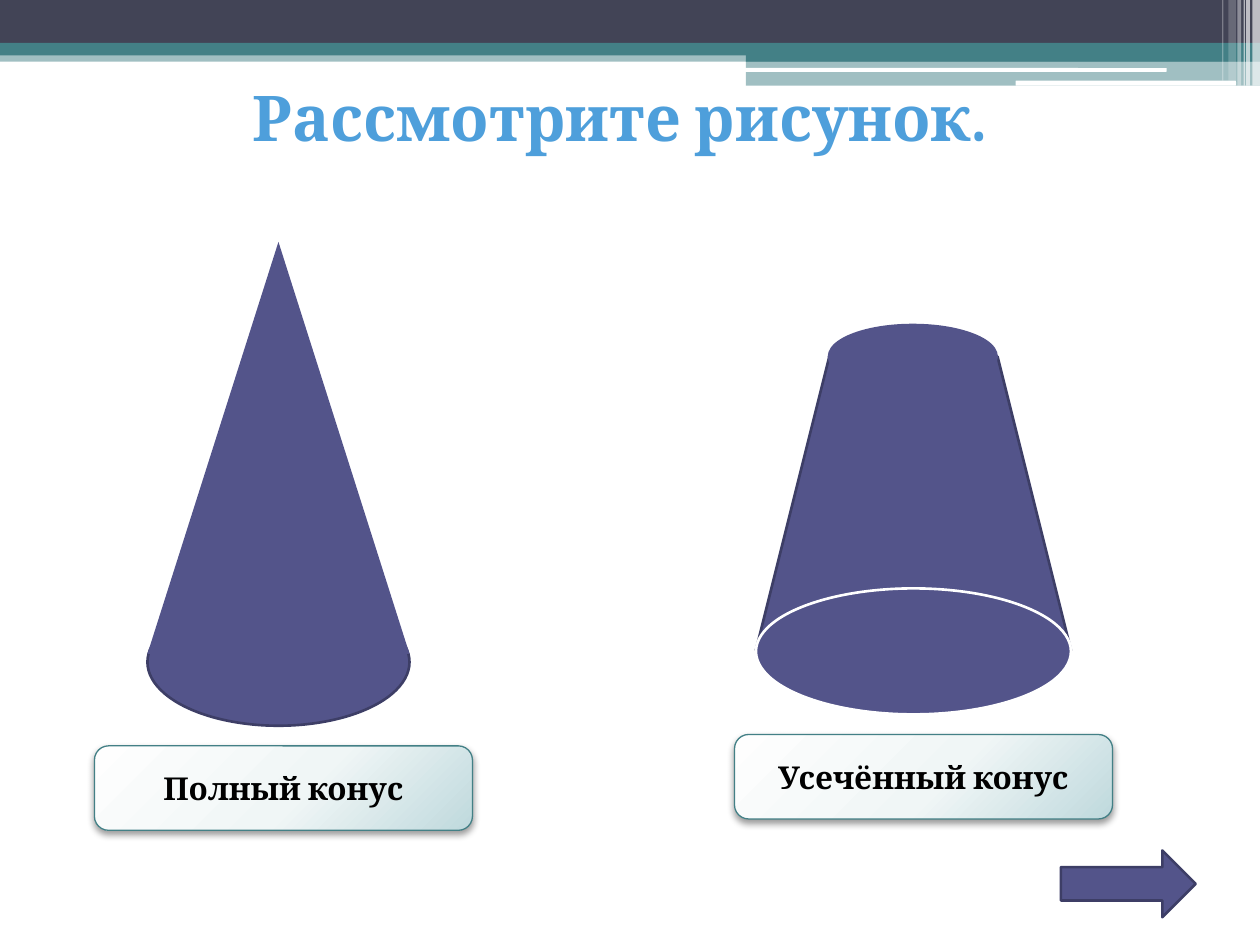
from lxml.etree import SubElement
from pptx import Presentation
from pptx.dml.color import RGBColor
from pptx.enum.shapes import MSO_SHAPE
from pptx.enum.text import MSO_ANCHOR, PP_ALIGN
from pptx.oxml import parse_xml
from pptx.oxml.ns import nsdecls, qn
from pptx.util import Inches, Pt

THEME = {
    "font": "Cambria", "title_size": Pt(36), "label_size": Pt(18),
    "title": "4E9FDB", "text": "000000", "white": "FFFFFF",
    "dark": "424456", "teal": "438086",
    "solid": "53548A", "edge": "3D3E66",
    "gradient": [(0, "FEFEFE"), (55, "F0F6F6"), (100, "BFD9DD")],
    "line": Pt(1.5), "thin_line": Pt(0.75),
}

# Grid of 1000 columns by 750 rows
presentation = Presentation()
presentation.slide_width, presentation.slide_height = Inches(10), Inches(7.5)
CELL = presentation.slide_width // 1000
slide = presentation.slides.add_slide(presentation.slide_layouts[5])


def draw(shapes, kind, box, fill, line=None, opacity=100):
    """Add a preset shape; box is left, top, width, height in grid cells."""
    shape = shapes.add_shape(kind, *(cells * CELL for cells in box))
    shape.shadow.inherit = False
    shape.fill.solid()
    shape.fill.fore_color.rgb = RGBColor.from_string(fill)
    if opacity < 100:
        color = shape.fill._xPr.find(qn("a:solidFill"))[0]
        SubElement(color, qn("a:alpha"), val=str(opacity * 1000))
    if line:
        shape.line.color.rgb = RGBColor.from_string(line)
        shape.line.width = THEME["line"]
    else:
        shape.line.fill.background()
    return shape


def write(shape, text, size, color):
    """Write one centred bold line."""
    frame = shape.text_frame
    frame.text = text
    frame.word_wrap = True
    frame.vertical_anchor = MSO_ANCHOR.MIDDLE
    paragraph = frame.paragraphs[0]
    paragraph.alignment = PP_ALIGN.CENTER
    font = paragraph.runs[0].font
    for name, value in {"name": THEME["font"], "size": size, "bold": True}.items():
        setattr(font, name, value)
    font.color.rgb = RGBColor.from_string(color)


# Header bands
for box, color, opacity in [
    ((0, 40, 1000, 9), "teal", 50),
    ((0, 0, 1000, 34), "dark", 100),
    ((0, 34, 1000, 10), "teal", 100),
    ((592, 39, 408, 10), "teal", 100),
    ((592, 48, 408, 20), "teal", 50),
]:
    draw(slide.shapes, MSO_SHAPE.RECTANGLE, box, THEME[color], opacity=opacity)
for box in [(591, 54, 335, 3), (806, 64, 175, 4)]:
    draw(slide.shapes, MSO_SHAPE.ROUNDED_RECTANGLE, box, THEME["white"])

# Translucent stripes in the corner
for left, width, height, opacity in [
    (994, 6, 68, 65), (989, 3, 68, 65), (987, 1, 68, 60),
    (982, 3, 68, 40), (975, 6, 64, 20), (970, 1, 64, 30),
]:
    draw(slide.shapes, MSO_SHAPE.RECTANGLE, (left, 0, width, height),
         THEME["white"], opacity=opacity)

# Title, in front of the header
title = slide.shapes.title
for name, cells in {"left": 0, "top": 30, "width": 983, "height": 125}.items():
    setattr(title, name, cells * CELL)
write(title, "Рассмотрите рисунок.", THEME["title_size"], THEME["title"])
slide.shapes._spTree.append(title._element)

# Arrow to the next step
draw(slide.shapes, MSO_SHAPE.RIGHT_ARROW, (842, 675, 107, 53),
     THEME["solid"], THEME["edge"])

# Full cone and truncated cone, one group each
full_cone = [
    (MSO_SHAPE.OVAL, (117, 475, 208, 101), "edge"),
    (MSO_SHAPE.FLOWCHART_EXTRACT, (117, 192, 208, 327), None),
]
truncated_cone = [
    (MSO_SHAPE.TRAPEZOID, (600, 283, 250, 233), "edge"),
    (MSO_SHAPE.OVAL, (600, 467, 250, 100), "white"),
    (MSO_SHAPE.OVAL, (658, 258, 133, 50), "solid"),
]
for cone in (full_cone, truncated_cone):
    group = slide.shapes.add_group_shape()
    for kind, box, line in cone:
        draw(group.shapes, kind, box, THEME["solid"], THEME.get(line))

# Captions with a radial gradient and a soft shadow
stops = "".join(
    f'<a:gs pos="{position * 1000}"><a:srgbClr val="{color}"/></a:gs>'
    for position, color in THEME["gradient"])
gradient = (
    f'<a:gradFill {nsdecls("a")} rotWithShape="1"><a:gsLst>{stops}</a:gsLst>'
    '<a:path path="circle"><a:fillToRect l="-40000" t="-90000" r="140000" b="190000"/>'
    '</a:path></a:gradFill>')
shadow = (
    f'<a:outerShdw {nsdecls("a")} blurRad="{Pt(4.1)}" dist="{Pt(2)}" dir="5400000" '
    f'rotWithShape="0"><a:srgbClr val="{THEME["text"]}"><a:alpha val="40000"/>'
    '</a:srgbClr></a:outerShdw>')
for left, top, text in [(75, 592, "Полный конус"), (583, 583, "Усечённый конус")]:
    caption = draw(slide.shapes, MSO_SHAPE.ROUNDED_RECTANGLE, (left, top, 300, 67),
                   THEME["white"], THEME["teal"])
    caption.line.width = THEME["thin_line"]
    properties = caption._element.spPr
    properties.replace(properties.find(qn("a:solidFill")), parse_xml(gradient))
    properties.find(qn("a:effectLst")).append(parse_xml(shadow))
    write(caption, text, THEME["label_size"], THEME["text"])

presentation.save("out.pptx")
